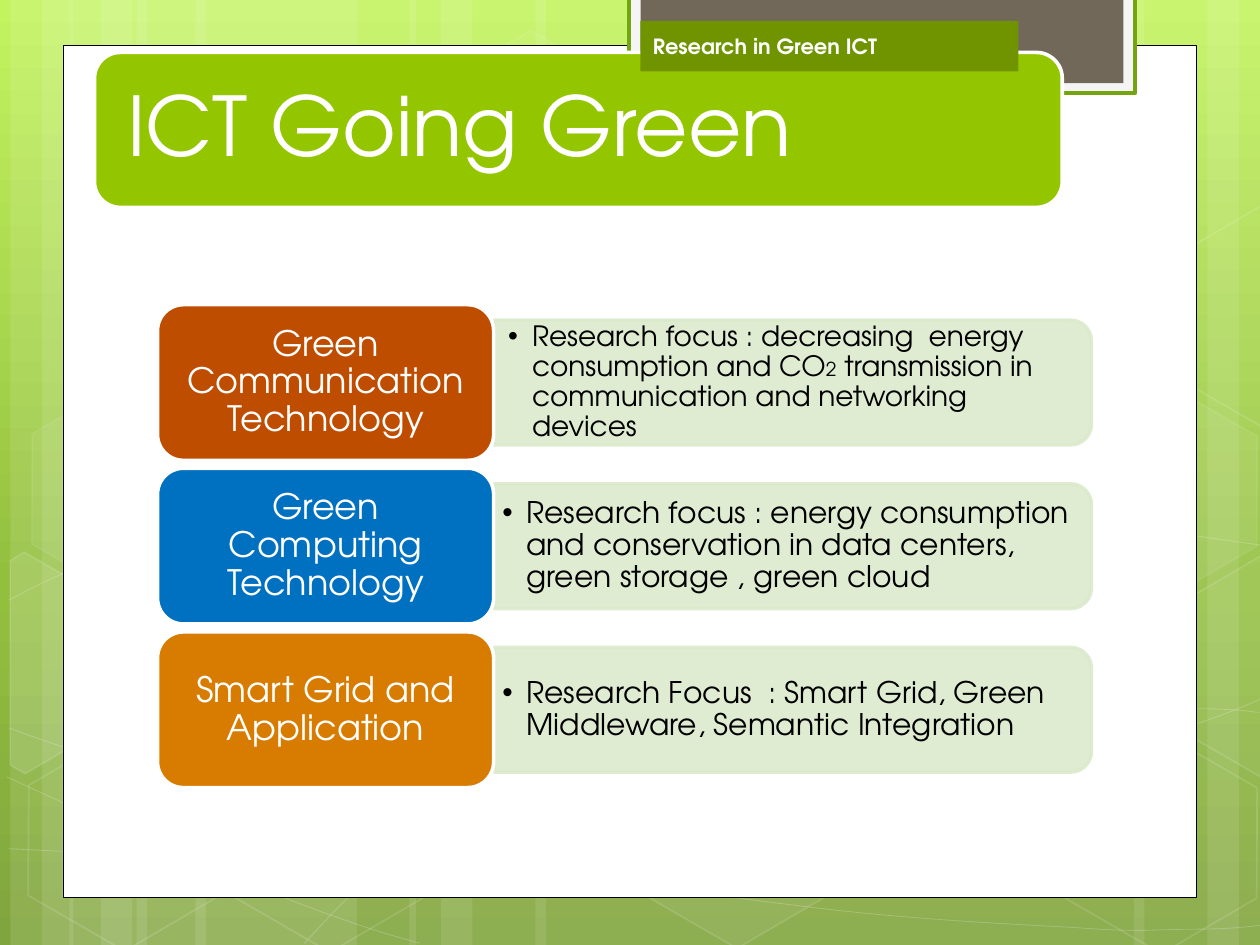
import copy
import math
from dataclasses import dataclass
from typing import Optional

import lxml.etree
import pptx
import pptx.dml.color
import pptx.enum.shapes
import pptx.enum.text
import pptx.oxml.ns
import pptx.util

Pt = pptx.util.Pt
qn = pptx.oxml.ns.qn
MSO = pptx.enum.shapes.MSO_SHAPE
ALIGN = pptx.enum.text.PP_ALIGN
MIDDLE = pptx.enum.text.MSO_ANCHOR.MIDDLE
FONT = "TeX Gyre Adventor"
WHITE = "FFFFFF"


@dataclass
class Paint:
    fill: Optional[str] = None
    fill_alpha: int = 100
    line: Optional[str] = None
    width: float = 1
    line_alpha: int = 100


@dataclass
class Hexagon:
    x: float
    y: float
    fill_alpha: int
    line_alpha: int


@dataclass
class CutHexagon:
    center: tuple
    points: list
    fill_alpha: int


@dataclass
class Topic:
    label: str
    color: str
    inset: tuple
    runs: list


BANDS = [(78, 126), (6, 36), (24, 60), (111.6, 126), (39.6, 36), (57.6, 60),
         (528, 126), (690, 36), (648, 60), (306, 222), (234, 36), (252, 60)]

CURVES = [
    [(5, 485), (44, 487), (83, 489), (137, 488), (191, 487), (258, 486), (330, 479),
     (402, 472), (504, 458), (570, 444), (636, 431), (703, 409), (725, 397)],
    [(5, 343), (26, 332), (47, 321), (87, 310), (128, 300), (186, 284), (250, 279),
     (314, 274), (392, 273), (471, 279), (550, 284), (682, 307), (725, 312)],
    [(4, 444), (91, 484), (178, 523), (240, 539)],
    [(5, 416), (27, 424), (50, 432), (92, 444), (134, 454), (197, 472), (257, 485),
     (317, 497), (392, 510), (452, 517), (512, 525), (576, 528), (614, 530),
     (652, 533), (662, 531), (680, 531), (699, 531), (712, 530), (725, 528)],
    [(174, 539), (187, 525), (200, 510), (217, 498), (235, 485), (259, 470), (279, 460),
     (300, 450), (312, 446), (338, 438), (364, 431), (413, 421), (438, 416),
     (464, 411), (467, 411), (490, 410), (512, 407), (547, 405), (572, 405),
     (597, 404), (638, 405), (638, 405), (654, 405), (670, 405), (686, 405),
     (699, 405), (711, 406), (718, 407), (724, 407), (722, 407), (724, 408)],
]

HEXAGONS = [Hexagon(240.5, 26, 4, 8), Hexagon(358, 424, 6, 12), Hexagon(8, 425.5, 0, 12),
            Hexagon(10, 224.6, 7, 8), Hexagon(125.3, 426.2, 0, 12), Hexagon(542, 326.2, 10, 12),
            Hexagon(600.5, 427, 0, 12), Hexagon(600.5, 226, 7, 8)]

CUT_HEXAGONS = [
    CutHexagon((25.92, 385.2), [(5.8, 320.4), (13.7, 315.4), (69.1, 347), (68.4, 410.4),
                                (14.4, 442), (5.8, 437)], 10),
    CutHexagon((709.2, 374.4), [(666.7, 349.2), (720.7, 317.5), (726.5, 321.1),
                                (726.5, 441.4), (721.4, 444.2), (666.7, 412.6)], 4),
    CutHexagon((709.2, 173.5), [(666.7, 149), (720.7, 117.4), (727, 121),
                                (726.5, 241.2), (721.4, 244.1), (666.7, 212.4)], 0),
]

TOPICS = [
    Topic("Green Communication Technology", "BF4D00", (8.3, 4.32),
          [("Research focus : decreasing  energy consumption and CO", 16), ("2", 11),
           (" transmission in communication and networking devices", 16)]),
    Topic("Green Computing Technology", "0070C0", (5.04, 2.88),
          [("Research focus : energy consumption and conservation in data centers, "
            "green storage , green cloud", 17)]),
    Topic("Smart Grid and Application", "D77C01", (5.04, 2.88),
          [("Research Focus  : Smart Grid, Green Middleware, Semantic Integration", 17)]),
]


def rgb(value: str):
    return pptx.dml.color.RGBColor.from_string(value)


def set_attrs(obj, attrs: dict) -> None:
    for name, value in attrs.items():
        setattr(obj, name, value)


def set_alpha(parent, alpha: int) -> None:
    if alpha < 100:
        clr = parent.find(qn("a:solidFill")).find(qn("a:srgbClr"))
        lxml.etree.SubElement(clr, qn("a:alpha")).set("val", str(alpha * 1000))


def apply_paint(sp, paint: Paint) -> None:
    sp.shadow.inherit = False
    spPr = sp._element.spPr
    if paint.fill and paint.fill_alpha:
        sp.fill.solid()
        sp.fill.fore_color.rgb = rgb(paint.fill)
        set_alpha(spPr, paint.fill_alpha)
    else:
        sp.fill.background()
    if paint.line:
        sp.line.color.rgb = rgb(paint.line)
        sp.line.width = Pt(paint.width)
        set_alpha(spPr.find(qn("a:ln")), paint.line_alpha)
    else:
        sp.line.fill.background()


def add_box(s, kind, box: tuple, paint: Paint, rotation: float = 0):
    sp = s.shapes.add_shape(kind, *map(Pt, box))
    sp.rotation = rotation
    apply_paint(sp, paint)
    return sp


def add_outline(s, points: list, paint: Paint, close: bool):
    scaled = [(Pt(x), Pt(y)) for x, y in points]
    fb = s.shapes.build_freeform(*scaled[0])
    fb.add_line_segments(scaled[1:], close=close)
    sp = fb.convert_to_shape()
    apply_paint(sp, paint)
    return sp


def add_curve(s, knots: list, paint: Paint) -> None:
    sp = add_outline(s, knots, paint, False)
    lines = list(sp._element.iter(qn("a:lnTo")))
    for i in range(0, len(lines), 3):
        curve = lxml.etree.Element(qn("a:cubicBezTo"))
        lines[i].addprevious(curve)
        for line in lines[i:i + 3]:
            curve.append(line[0])
            line.getparent().remove(line)


def add_cut_hexagon(s, cut: CutHexagon) -> None:
    cx, cy = cut.center
    cos, sin = math.cos(math.radians(30)), math.sin(math.radians(30))
    points = [(cx + (x - cx) * cos + (y - cy) * sin, cy - (x - cx) * sin + (y - cy) * cos)
              for x, y in cut.points]
    sp = add_outline(s, points, Paint(WHITE, cut.fill_alpha, WHITE, 1, 12), True)
    sp.rotation = 30


def write_text(sp, runs: list, color: str, inset: tuple, align=ALIGN.LEFT,
               spacing: float = 0.9, bold: bool = False, bullet: bool = False) -> None:
    tf = sp.text_frame
    across, down = map(Pt, inset)
    set_attrs(tf, dict(word_wrap=True, auto_size=pptx.enum.text.MSO_AUTO_SIZE.NONE,
                       vertical_anchor=MIDDLE, margin_left=across, margin_right=across,
                       margin_top=down, margin_bottom=down))
    p = tf.paragraphs[0]
    if bullet:
        pPr = p._p.get_or_add_pPr()
        pPr.set("marL", str(Pt(13.68)))
        pPr.set("indent", str(Pt(-13.68)))
        lxml.etree.SubElement(pPr, qn("a:buFont")).set("typeface", "Arial")
        lxml.etree.SubElement(pPr, qn("a:buChar")).set("char", "•")
    set_attrs(p, dict(alignment=align, line_spacing=spacing))
    for text, size in runs:
        r = p.add_run()
        r.text = text
        set_attrs(r.font, dict(name=FONT, size=Pt(size), bold=bold))
        r.font.color.rgb = rgb(color)


def paint_background(s) -> None:
    fill = s.background.fill
    fill.gradient()
    fill.gradient_angle = 270
    gs_list = s._element.find(".//" + qn("a:gsLst"))
    gs_list.append(copy.deepcopy(gs_list[0]))
    stops = [(0, "C3F35F"), (0.62, "93BF3F"), (1, "81A53E")]
    for stop, (position, color) in zip(fill.gradient_stops, stops):
        stop.position = position
        stop.color.rgb = rgb(color)


def draw_backdrop(s) -> None:
    for x, w in BANDS:
        add_box(s, MSO.RECTANGLE, (x, 0, w, 540), Paint(WHITE, 10))
    for knots in CURVES:
        add_curve(s, knots, Paint(line=WHITE, width=0.5, line_alpha=20))
    for h in HEXAGONS:
        sp = add_box(s, MSO.HEXAGON, (h.x, h.y, 126, 109.44),
                     Paint(WHITE, h.fill_alpha, WHITE, 1, h.line_alpha), 30)
        sp.adjustments[0] = 0.285
    for cut in CUT_HEXAGONS:
        add_cut_hexagon(s, cut)
    add_box(s, MSO.RECTANGLE, (36, 25.92, 648, 487), Paint(WHITE, line="000000", width=0.5))
    add_box(s, MSO.RECTANGLE, (359.28, -1.44, 289.44, 54.72),
            Paint("F5F5F5", line="74A510", width=2.08))
    add_box(s, MSO.RECTANGLE, (366, -1.44, 276, 48.96), Paint("71685A"))


def draw_topic(s, topic: Topic, top: float) -> None:
    mid = top + 44.5
    add_box(s, MSO.ROUND_2_SAME_RECTANGLE, (417.4, mid - 170.64, 71.28, 341.28),
            Paint("DCEACC", 90, "DCEACC", 2.08, 90), 90)
    body = s.shapes.add_textbox(*map(Pt, (282.1, mid - 32.04, 338.4, 64.08)))
    write_text(body, topic.runs, "000000", topic.inset, bullet=True)
    label = add_box(s, MSO.ROUNDED_RECTANGLE, (90, top, 192.1, 89),
                    Paint(topic.color, line=WHITE, width=2.08))
    write_text(label, [(topic.label, 20)], WHITE, (5.76, 2.88), ALIGN.CENTER)


def draw_heading(s) -> None:
    add_box(s, MSO.ROUNDED_RECTANGLE, (54, 30, 553, 88.56),
            Paint("94C600", line=WHITE, width=2.08))
    title = s.shapes.title
    s.shapes._spTree.append(title._element)
    set_attrs(title, dict(left=Pt(58.32), top=Pt(34.2), width=Pt(544.32), height=Pt(79.92)))
    write_text(title, [("ICT Going Green", 47)], WHITE, (14.4, 14.4))
    tag = add_box(s, MSO.RECTANGLE, (366, 12, 216, 28.8), Paint("6F9400"))
    write_text(tag, [("Research in Green ICT", 12)], "FEFEFE", (7.2, 3.6), spacing=1.0, bold=True)


def main() -> None:
    prs = pptx.Presentation()
    set_attrs(prs, dict(slide_width=Pt(720), slide_height=Pt(540)))
    s = prs.slides.add_slide(prs.slide_layouts[5])
    paint_background(s)
    draw_backdrop(s)
    for i, topic in enumerate(TOPICS):
        draw_topic(s, topic, 174.1 + 93.5 * i)
    draw_heading(s)
    prs.save("out.pptx")


if __name__ == "__main__":
    main()
